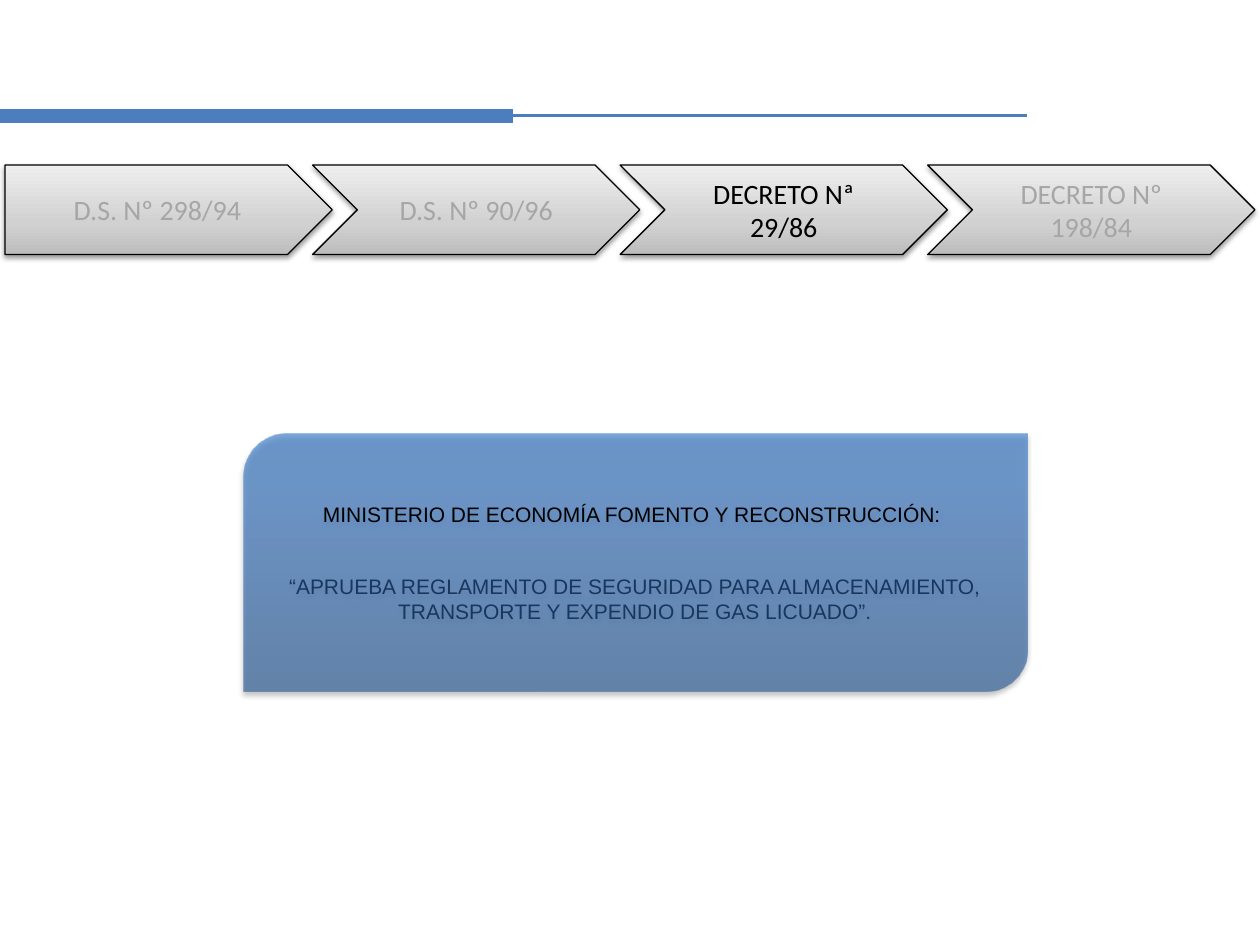
import dataclasses

import lxml.etree
import pptx
import pptx.dml.color
import pptx.enum.shapes
import pptx.enum.text
import pptx.oxml.ns
import pptx.util

SHAPE = pptx.enum.shapes.MSO_SHAPE
qn = pptx.oxml.ns.qn


@dataclasses.dataclass(frozen=True)
class Theme:
    rule: str = "4B7EBC"
    ink: str = "000000"
    muted: str = "A6A6A6"
    navy: str = "17375E"
    step_stops: tuple = ((0, "BDBDBD"), (35, "D1D1D1"), (100, "EEEEEE"))
    card_stops: tuple = ((0, "2F5F99"), (80, "3D7CC7"), (100, "3A7CCB"))
    step_font: str = "Calibri"
    card_font: str = "Arial"
    step_size: int = 16
    card_size: int = 12


THEME = Theme()
WIDTH, HEIGHT = pptx.util.Inches(10), pptx.util.Inches(7.5)
COL, ROW = WIDTH / 100, HEIGHT / 100


def grid(left, top, width, height):
    return [round(n) for n in (left * COL, top * ROW, width * COL, height * ROW)]


def rgb(value):
    return pptx.dml.color.RGBColor.from_string(value)


def add_color(parent, value, alpha):
    color = lxml.etree.SubElement(parent, qn("a:srgbClr"), val=value)
    if alpha < 100:
        lxml.etree.SubElement(color, qn("a:alpha"), val=str(alpha * 1000))


def set_gradient(sp, stops, alpha=100):
    sp.fill.gradient()
    sp.fill.gradient_angle = 90
    stop_list = next(sp._element.spPr.iter(qn("a:gsLst")))
    stop_list.clear()
    for position, value in stops:
        stop = lxml.etree.SubElement(stop_list, qn("a:gs"), pos=str(position * 1000))
        add_color(stop, value, alpha)


def set_shadow(sp, alpha, blur, distance):
    sp.shadow.inherit = False
    effects = sp._element.spPr.find(qn("a:effectLst"))
    shadow = lxml.etree.SubElement(
        effects, qn("a:outerShdw"),
        blurRad=str(pptx.util.Pt(blur)), dist=str(pptx.util.Pt(distance)),
        dir="5400000", rotWithShape="0")
    add_color(shadow, THEME.ink, alpha)


def add_run(p, text, font, size, color):
    p.alignment = pptx.enum.text.PP_ALIGN.CENTER
    r = p.add_run()
    r.text = text
    r.font.name = font
    r.font.size = pptx.util.Pt(size)
    r.font.color.rgb = rgb(color)


def middle_frame(sp):
    tf = sp.text_frame
    tf.word_wrap = True
    tf.vertical_anchor = pptx.enum.text.MSO_ANCHOR.MIDDLE
    return tf


def add_header_rule(s, box):
    left, top, width, _ = box
    for share, weight in ((1, 1.75), (0.5, 8)):
        line = s.shapes.add_connector(
            pptx.enum.shapes.MSO_CONNECTOR.STRAIGHT,
            left, top, left + round(width * share), top)
        line.line.color.rgb = rgb(THEME.rule)
        line.line.width = pptx.util.Pt(weight)
        lxml.etree.SubElement(line._element.spPr, qn("a:effectLst"))


def add_steps(s, box, labels, active):
    left, top, width, height = box
    overlap = 0.06
    step_width = width / (len(labels) - overlap * (len(labels) - 1))
    pitch = step_width * (1 - overlap)
    for i, label in enumerate(labels):
        kind = SHAPE.CHEVRON if i else SHAPE.PENTAGON
        sp = s.shapes.add_shape(
            kind, round(left + i * pitch), top, round(step_width), height)
        set_gradient(sp, THEME.step_stops)
        sp.line.color.rgb = rgb(THEME.ink)
        sp.line.width = pptx.util.Pt(0.75)
        set_shadow(sp, 38, 3.1, 1.6)
        tf = middle_frame(sp)
        tf.margin_left = tf.margin_right = pptx.util.Inches(0.15)
        add_run(tf.paragraphs[0], label, THEME.step_font, THEME.step_size,
                THEME.ink if i == active else THEME.muted)


def add_card(s, box, heading, body):
    sp = s.shapes.add_shape(SHAPE.ROUND_2_DIAG_RECTANGLE, *box)
    set_gradient(sp, THEME.card_stops, alpha=65)
    sp.line.fill.background()
    set_shadow(sp, 35, 3.1, 1.8)
    tf = middle_frame(sp)
    add_run(tf.paragraphs[0], heading, THEME.card_font, THEME.card_size, THEME.ink)
    p = tf.add_paragraph()
    p.space_before = pptx.util.Pt(27)
    add_run(p, body, THEME.card_font, THEME.card_size, THEME.navy)


def main():
    prs = pptx.Presentation()
    prs.slide_width, prs.slide_height = WIDTH, HEIGHT
    s = prs.slides.add_slide(prs.slide_layouts[6])
    add_header_rule(s, grid(0, 12.27, 81.5, 0))
    add_steps(
        s, grid(0.4, 17.47, 99.2, 9.47),
        ["D.S. Nº 298/94", "D.S. Nº 90/96", "DECRETO Nª 29/86", "DECRETO Nº 198/84"],
        active=2)
    add_card(
        s, grid(19.3, 45.87, 62.2, 27.33),
        "MINISTERIO DE ECONOMÍA FOMENTO Y RECONSTRUCCIÓN: ",
        "“APRUEBA REGLAMENTO DE SEGURIDAD PARA ALMACENAMIENTO, "
        "TRANSPORTE Y EXPENDIO DE GAS LICUADO”.")
    prs.save("out.pptx")


if __name__ == "__main__":
    main()
